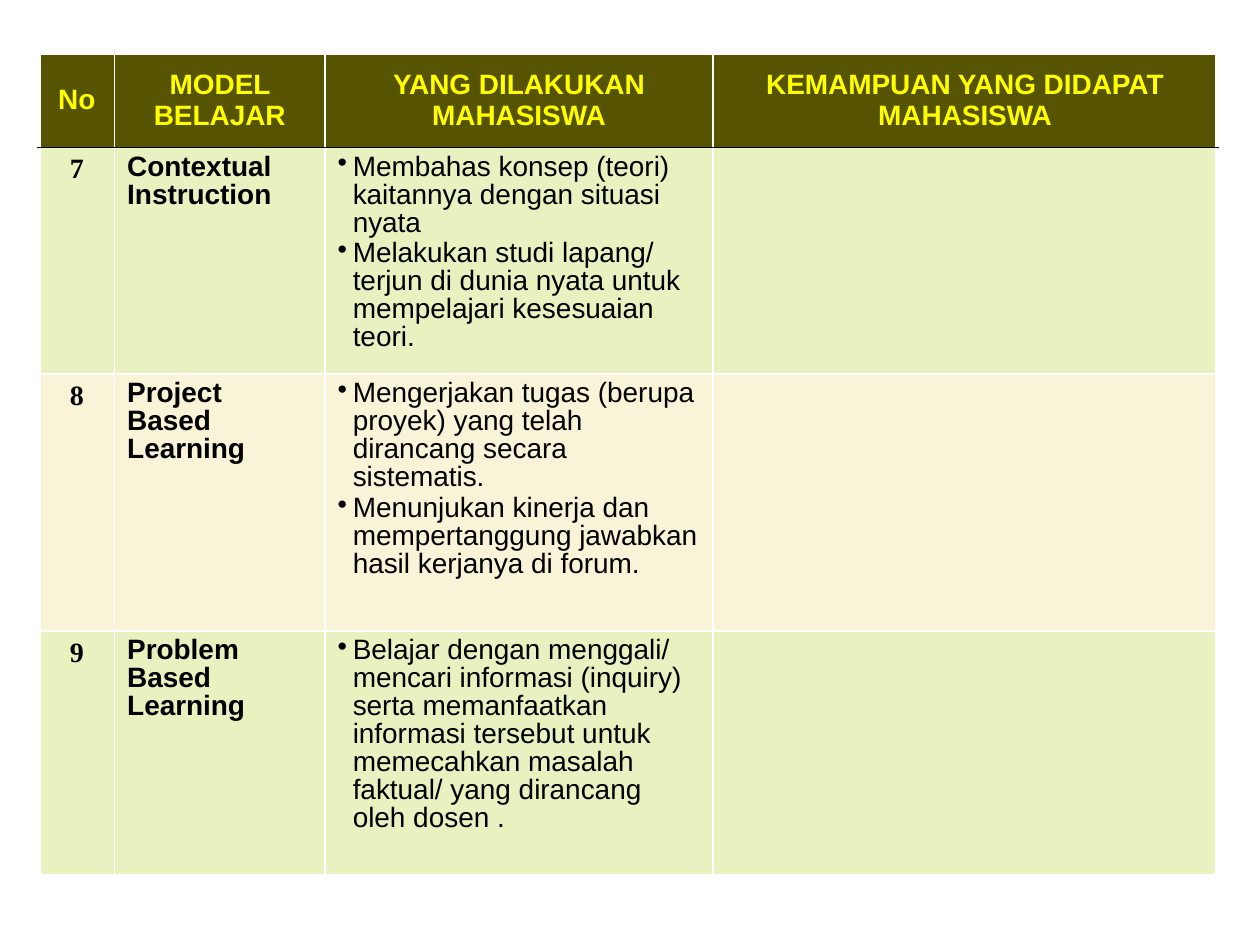
from lxml.etree import SubElement
from pptx import Presentation
from pptx.dml.color import RGBColor
from pptx.enum.text import MSO_ANCHOR, PP_ALIGN
from pptx.oxml import parse_xml
from pptx.oxml.ns import nsdecls, qn
from pptx.util import Inches, Pt

COLS = [0.6, 1.67, 3.08, 4]
ROWS = [0.75, 1.8, 2.04, 1.94]
HEADS = ["No", "MODEL BELAJAR", "YANG DILAKUKAN MAHASISWA", "KEMAMPUAN YANG DIDAPAT MAHASISWA"]
MODELS = [
    ("7", "Contextual Instruction", [
        "Membahas konsep (teori) kaitannya dengan situasi nyata",
        "Melakukan studi lapang/ terjun di dunia nyata untuk mempelajari kesesuaian teori."]),
    ("8", "Project Based Learning", [
        "Mengerjakan tugas (berupa proyek) yang telah dirancang secara sistematis.",
        "Menunjukan kinerja dan mempertanggung jawabkan hasil kerjanya di forum."]),
    ("9", "Problem Based Learning", [
        "Belajar dengan menggali/ mencari informasi (inquiry) serta memanfaatkan informasi "
        "tersebut untuk memecahkan masalah faktual/ yang dirancang oleh dosen ."]),
]


def rgb(color):
    return RGBColor.from_string(color)


def set_border(cell, i, side, color, width):
    ln = parse_xml(
        f'<a:{side} {nsdecls("a")} w="{Pt(width)}"><a:solidFill>'
        f'<a:srgbClr val="{color}"/></a:solidFill></a:{side}>')
    cell._tc.get_or_add_tcPr().insert(i, ln)


def style_cell(cell, row, col, fill):
    last_row, last_col = len(ROWS) - 1, len(COLS) - 1
    cell.fill.solid()
    cell.fill.fore_color.rgb = rgb(fill)
    borders = [
        ("lnL", "FFFFFF", 2.25 if col == 0 else 1),
        ("lnR", "FFFFFF", 2.25 if col == last_col else 1),
        ("lnT", "000000" if row == 1 else "FFFFFF", 2.25 if row == 0 else 1),
        ("lnB", "000000" if row == 0 else "FFFFFF", 2.25 if row == last_row else 1),
    ]
    for i, border in enumerate(borders):
        set_border(cell, i, *border)


def add_bullet(p):
    pPr = p._p.get_or_add_pPr()
    pPr.set("marL", str(Inches(0.12)))
    pPr.set("indent", str(-Inches(0.12)))
    SubElement(pPr, qn("a:buChar")).set("char", "•")


def write(cell, texts, color="000000", font="Arial", bold=True, align=PP_ALIGN.LEFT,
          spacing=None, bullet=False):
    tf = cell.text_frame
    for i, text in enumerate(texts):
        p = tf.add_paragraph() if i else tf.paragraphs[0]
        if bullet:
            add_bullet(p)
        p.alignment = align
        if spacing:
            p.line_spacing = spacing
        if i:
            p.space_before = Pt(1.6)
        r = p.add_run()
        r.text = text
        r.font.name, r.font.size, r.font.bold = font, Pt(16), bold
        r.font.color.rgb = rgb(color)


def add_model_table(s):
    frame = s.shapes.add_table(len(ROWS), len(COLS), Inches(0.31), Inches(0.42),
                               Inches(sum(COLS)), Inches(sum(ROWS)))
    table = frame.table
    table.horz_banding = False
    for column, width in zip(table.columns, COLS):
        column.width = Inches(width)
    for row, height in zip(table.rows, ROWS):
        row.height = Inches(height)
    for i, fill in enumerate(["565400", "EAF1C1", "F9F3D7", "EAF1C1"]):
        for j in range(len(COLS)):
            style_cell(table.cell(i, j), i, j, fill)
    return table


def main():
    prs = Presentation()
    prs.slide_width, prs.slide_height = Inches(10), Inches(7.5)
    s = prs.slides.add_slide(prs.slide_layouts[6])
    table = add_model_table(s)
    for j, head in enumerate(HEADS):
        cell = table.cell(0, j)
        cell.vertical_anchor = MSO_ANCHOR.MIDDLE
        write(cell, [head], color="FFFF00", align=PP_ALIGN.CENTER)
    for i, (number, model, activities) in enumerate(MODELS, 1):
        write(table.cell(i, 0), [number], font="Times New Roman", align=PP_ALIGN.CENTER)
        write(table.cell(i, 1), [model], spacing=0.9)
        write(table.cell(i, 2), activities, bold=False, spacing=0.9, bullet=True)
    prs.save("out.pptx")


if __name__ == "__main__":
    main()
